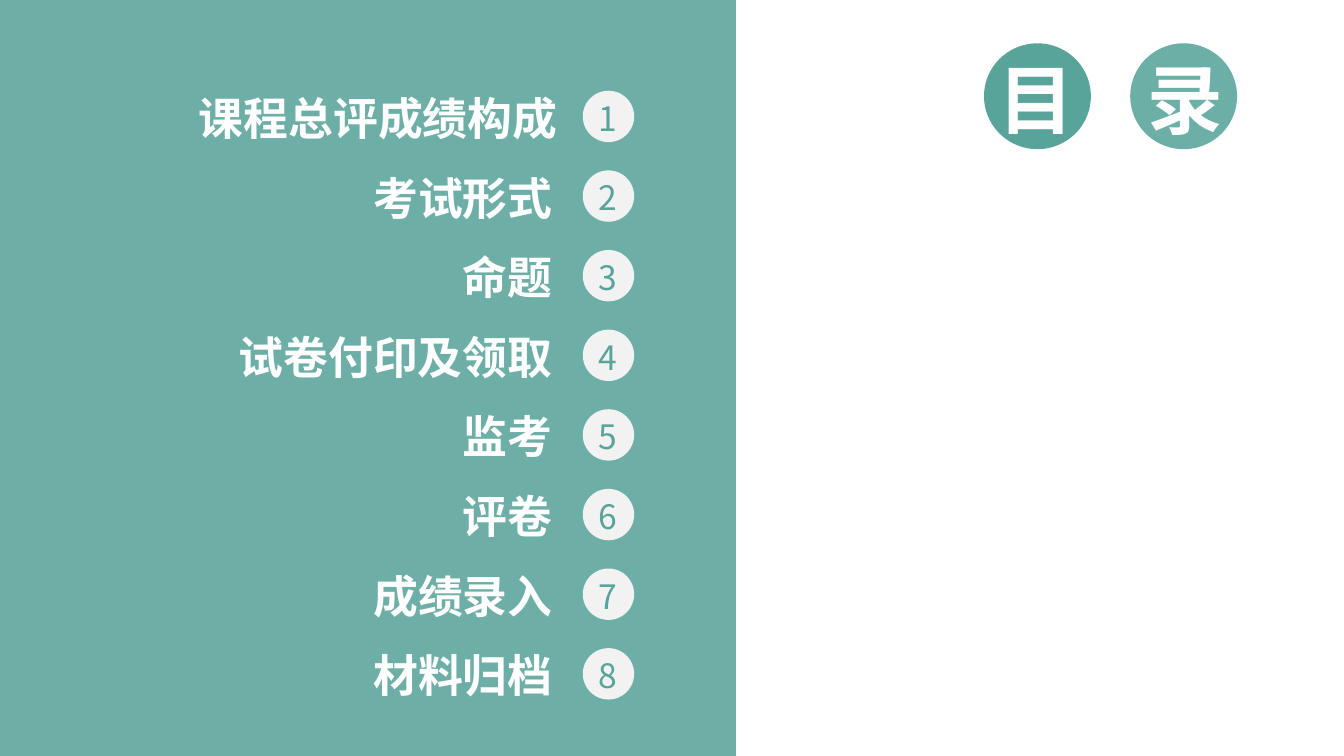
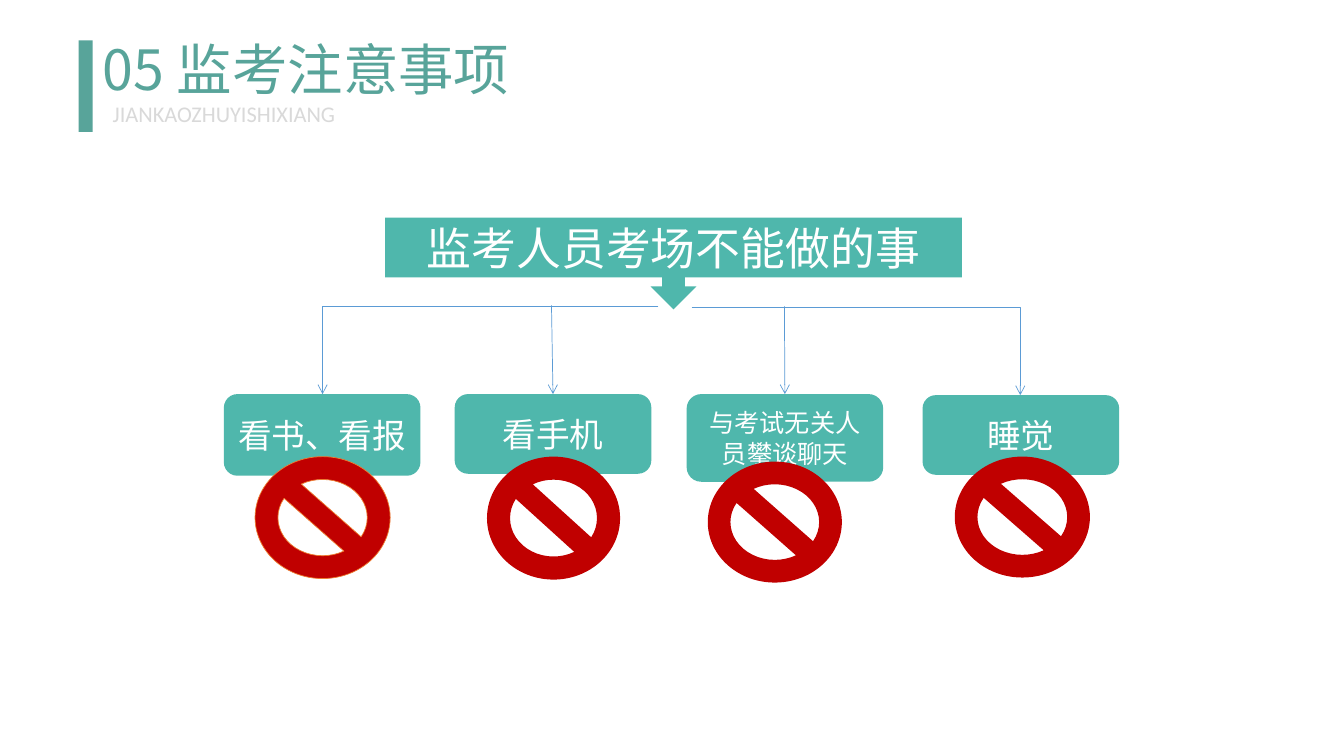
from lxml.etree import SubElement
from pptx import Presentation
from pptx.dml.color import RGBColor
from pptx.enum.shapes import MSO_CONNECTOR as Connector, MSO_SHAPE as Shape
from pptx.enum.text import MSO_ANCHOR as Anchor, MSO_AUTO_SIZE as AutoSize, PP_ALIGN as Align
from pptx.oxml.ns import qn
from pptx.util import Inches, Pt

TEAL = "58A49A"
MINT = "4FB7AC"
WHITE = "FFFFFF"
PALE = "F2F2F2"
GREY = "D9D9D9"
RED = "C00000"
ORANGE = "ED7D31"
BLUE = "5B9BD5"
CJK_FONT = "Noto Sans CJK SC"
LATIN_FONT = "Calibri"

TOPICS = ["课程总评成绩构成", "考试形式", "命题", "试卷付印及领取",
          "监考", "评卷", "成绩录入", "材料归档"]
ROW_STEP = 0.79

BANS = [
    ("看书、看报", 24, (2.22, 3.91, 1.95, 0.81), (2.53, 4.53, 1.34, 1.21), ORANGE),
    ("看手机", 24, (4.51, 3.91, 1.95, 0.79), (4.83, 4.53, 1.32, 1.22), None),
    ("与考试无关人员攀谈聊天", 18, (6.81, 3.91, 1.95, 0.87), (7.02, 4.58, 1.33, 1.2), None),
    ("睡觉", 24, (9.15, 3.92, 1.95, 0.79), (9.47, 4.53, 1.34, 1.2), None),
]


def color(value):
    return RGBColor.from_string(value)


def lengths(place):
    return [Inches(value) for value in place]


def write(frame, text, size, font, ink, align=Align.LEFT, bold=False):
    para = frame.paragraphs[0]
    para.alignment = align
    span = para.add_run()
    span.text = text
    span.font.size = Pt(size)
    span.font.name = font
    span.font.bold = bold
    span.font.color.rgb = color(ink)
    SubElement(span.font._element, qn("a:ea"), typeface=CJK_FONT)
    return para


def add_block(shapes, kind, place, fill, opacity=100, outline=None):
    block = shapes.add_shape(kind, *lengths(place))
    block.shadow.inherit = False
    block.fill.solid()
    block.fill.fore_color.rgb = color(fill)
    if opacity < 100:
        tint = block.fill._xPr.find(qn("a:solidFill"))[0]
        SubElement(tint, qn("a:alpha"), val=str(opacity * 1000))
    if outline:
        block.line.color.rgb = color(outline)
        block.line.width = Pt(0.5)
    else:
        block.line.fill.background()
    return block


def add_label_block(shapes, kind, place, text, size):
    block = add_block(shapes, kind, place, MINT)
    frame = block.text_frame
    frame.word_wrap = True
    frame.vertical_anchor = Anchor.MIDDLE
    write(frame, text, size, LATIN_FONT, WHITE, Align.CENTER)
    return block


def add_text(shapes, place, text, size, font, ink, align=Align.LEFT,
             bold=False, wrap=True):
    box = shapes.add_textbox(*lengths(place))
    box.text_frame.word_wrap = wrap
    box.text_frame.auto_size = AutoSize.NONE
    return write(box.text_frame, text, size, font, ink, align, bold)


def add_arrow(shapes, start, end, target=None, bent=False):
    kind = Connector.ELBOW if bent else Connector.STRAIGHT
    arrow = shapes.add_connector(kind, *lengths(start + end))
    if target is not None:
        arrow.end_connect(target, 0)
    arrow.line.color.rgb = color(BLUE)
    arrow.line.width = Pt(0.5)
    properties = arrow._element.spPr
    if bent:
        properties.find(qn("a:prstGeom")).set("prst", "bentConnector2")
    SubElement(arrow.line._get_or_add_ln(), qn("a:tailEnd"), type="arrow")
    SubElement(properties, qn("a:effectLst"))


def add_topic(page, index, topic):
    shapes = page.shapes.add_group_shape().shapes
    drop = index * ROW_STEP
    left = 1.87 if index else 1.92
    add_text(shapes, (left, 0.85 + drop, 3.71, 0.64), topic, 32, CJK_FONT, WHITE,
             Align.RIGHT, bold=True, wrap=False)
    add_block(shapes, Shape.OVAL, (5.78, 0.9 + drop, 0.51, 0.51), PALE)
    add_text(shapes, (5.84, 0.92 + drop, 0.42, 0.51), str(index + 1), 24,
             CJK_FONT, TEAL, wrap=False)


def add_heading(page, title, subtitle):
    para = add_text(page.shapes, (0.92, 0.37, 11.5, 0.8), title, 39.6, CJK_FONT, TEAL)
    para.line_spacing = 0.9
    add_block(page.shapes, Shape.RECTANGLE, (0.78, 0.4, 0.14, 0.91), TEAL)
    add_text(page.shapes, (1.02, 0.94, 3.8, 0.37), subtitle, 16, LATIN_FONT, GREY,
             Align.JUSTIFY)


def build_contents(page):
    add_block(page.shapes, Shape.RECTANGLE, (0, 0, 7.3, 7.5), TEAL, 87)
    heading = page.shapes.add_group_shape().shapes
    for sign, left, text_left, opacity in (("目", 9.76, 9.81, 100),
                                           ("录", 11.21, 11.28, 88)):
        add_block(heading, Shape.OVAL, (left, 0.43, 1.06, 1.05), TEAL, opacity)
        add_text(heading, (text_left, 0.48, 1.14, 1.01), sign, 54, CJK_FONT, WHITE,
                 bold=True)
    for index, topic in enumerate(TOPICS):
        add_topic(page, index, topic)


def build_bans(page):
    shapes = page.shapes
    add_heading(page, "05 监考注意事项", "JIANKAOZHUYISHIXIANG")
    add_label_block(shapes, Shape.DOWN_ARROW_CALLOUT, (3.82, 2.16, 5.72, 0.91),
                    "监考人员考场不能做的事", 32)
    boxes = [add_label_block(shapes, Shape.ROUNDED_RECTANGLE, place, text, size)
             for text, size, place, _, _ in BANS]
    add_arrow(shapes, (6.53, 3.04), (3.2, 3.91), bent=True)
    add_arrow(shapes, (5.47, 3.03), (5.49, 3.91), boxes[1])
    add_arrow(shapes, (7.78, 3.04), (7.78, 3.91), boxes[2])
    add_arrow(shapes, (6.86, 3.05), (10.12, 3.92), bent=True)
    for _, _, _, place, outline in BANS:
        add_block(shapes, Shape.NO_SYMBOL, place, RED, outline=outline)


def main():
    deck = Presentation()
    deck.slide_width = Inches(13.33)
    deck.slide_height = Inches(7.5)
    for build in (build_contents, build_bans):
        build(deck.slides.add_slide(deck.slide_layouts[6]))
    deck.save("out.pptx")


if __name__ == "__main__":
    main()
